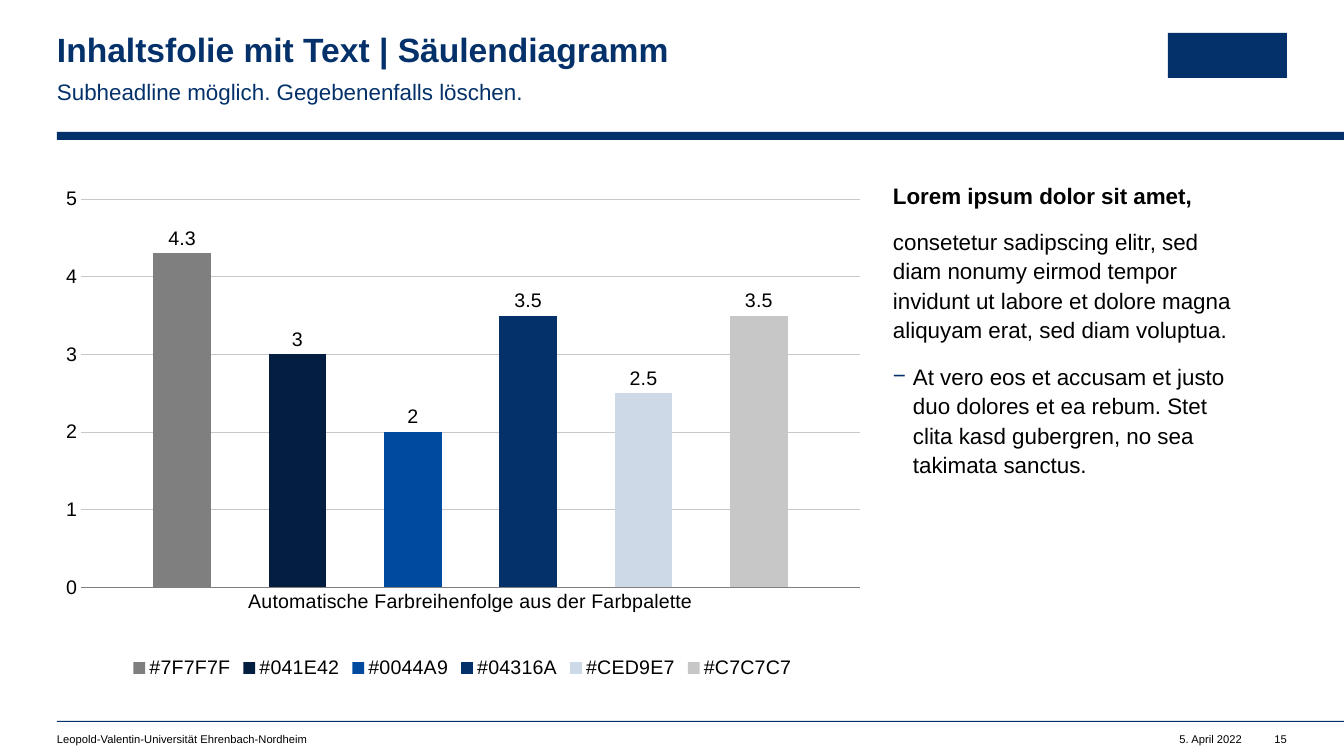
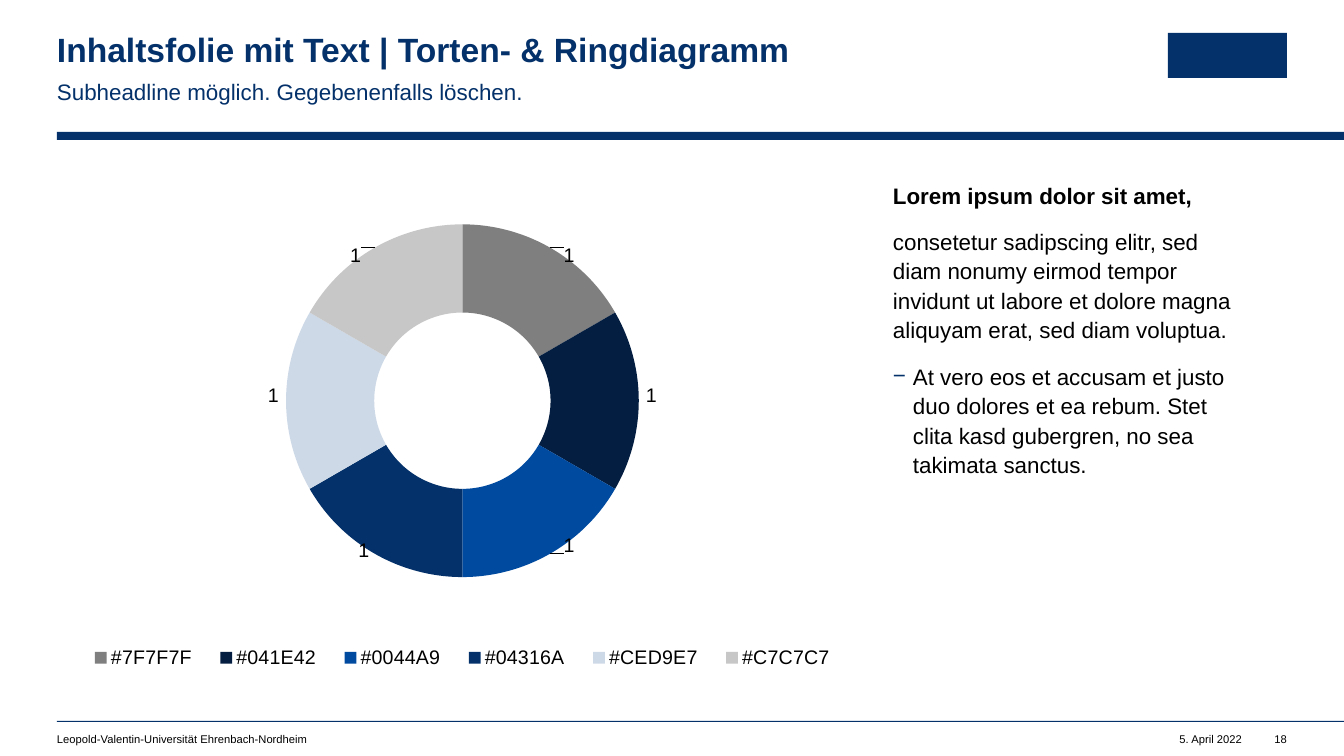
from lxml.etree import SubElement
from pptx import Presentation
from pptx.chart.data import CategoryChartData
from pptx.dml.color import RGBColor
from pptx.enum.chart import XL_CHART_TYPE as CHART
from pptx.enum.chart import XL_LABEL_POSITION as LABEL_POS
from pptx.enum.chart import XL_LEGEND_POSITION as LEGEND_POS
from pptx.enum.chart import XL_TICK_MARK as TICK
from pptx.enum.shapes import MSO_SHAPE as SHAPE
from pptx.enum.text import PP_ALIGN as ALIGN
from pptx.oxml.ns import qn
from pptx.util import Inches, Pt

WIDTH, HEIGHT = 1344, 756
SCALE = Inches(7.5) / HEIGHT
LEFT, RIGHT = 57, 1287
FONT = "Arial"
COLORS = {
    "navy": "04316A",
    "black": "000000",
    "axis": "7F7F7F",
    "grid": "C7C7C7",
}
SWATCHES = {
    "#7F7F7F": "7F7F7F",
    "#041E42": "041E42",
    "#0044A9": "004A9F",
    "#04316A": "04316A",
    "#CED9E7": "CED9E7",
    "#C7C7C7": "C7C7C7",
}
CHART_BOX = (LEFT, 179, 811, 504)
LABEL_SHIFTS = [(41, -31), (54, -7), (37, 28), (-29, 34), (-53, -7), (-40, -31)]


def px(n):
    return round(n * SCALE)


def rgb(name):
    return RGBColor.from_string(COLORS[name])


def add_bar(s, *box):
    sp = s.shapes.add_shape(SHAPE.RECTANGLE, *map(px, box))
    sp.shadow.inherit = False
    sp.fill.solid()
    sp.fill.fore_color.rgb = rgb("navy")
    sp.line.fill.background()


def add_box(s, *box, right=0):
    tf = s.shapes.add_textbox(*map(px, box)).text_frame
    tf.word_wrap = True
    tf.margin_left = tf.margin_top = tf.margin_bottom = 0
    tf.margin_right = px(right)
    return tf


def write(tf, text, size=16, color="black", bold=False, align=ALIGN.LEFT,
          line=1.1, after=12, bullet=None):
    p = tf.add_paragraph() if tf.text else tf.paragraphs[0]
    p.alignment = align
    p.line_spacing = line
    p.space_after = Pt(after)
    r = p.add_run()
    r.text = text
    r.font.name = FONT
    r.font.size = Pt(size)
    r.font.bold = bold
    r.font.color.rgb = rgb(color)
    if bullet:
        pPr = p._p.get_or_add_pPr()
        pPr.set("marL", str(px(20)))
        pPr.set("indent", str(-px(20)))
        clr = SubElement(pPr, qn("a:buClr"))
        SubElement(clr, qn("a:srgbClr"), val=COLORS["navy"])
        SubElement(pPr, qn("a:buFont"), typeface=FONT)
        SubElement(pPr, qn("a:buChar"), char=bullet)


def add_frame(s, title, number):
    add_bar(s, LEFT, 132, WIDTH - LEFT, 8)
    add_bar(s, LEFT, 721, WIDTH - LEFT, 1)
    add_bar(s, 1168, 33, 119, 45)
    write(add_box(s, LEFT, 33, 755, 36), title,
          size=24, color="navy", bold=True, line=0.9, after=0)
    write(add_box(s, LEFT, 76, 755, 27, right=39),
          "Subheadline möglich. Gegebenenfalls löschen.", color="navy")
    footers = [
        (LEFT, 603, "Leopold-Valentin-Universität Ehrenbach-Nordheim", ALIGN.LEFT),
        (1148, 94, "5. April 2022", ALIGN.RIGHT),
        (1257, 30, number, ALIGN.RIGHT),
    ]
    for left, width, text, align in footers:
        write(add_box(s, left, 732, width, 13), text,
              size=8, align=align, line=1.0, after=0)


def add_body(s):
    tf = add_box(s, 893, 179, RIGHT - 893, 504, right=39)
    write(tf, "Lorem ipsum dolor sit amet,", bold=True)
    write(tf, "consetetur sadipscing elitr, sed diam nonumy eirmod tempor "
              "invidunt ut labore et dolore magna aliquyam erat, sed diam voluptua.")
    write(tf, "At vero eos et accusam et justo duo dolores et ea rebum. "
              "Stet clita kasd gubergren, no sea takimata sanctus.", bullet="−")


def set_font(font):
    font.name = FONT
    font.size = Pt(14)
    font.color.rgb = rgb("black")


def set_layout(parent, index, **values):
    for old in parent.findall(qn("c:layout")):
        parent.remove(old)
    layout = SubElement(parent, qn("c:layout"))
    parent.insert(index, layout)
    manual = SubElement(layout, qn("c:manualLayout"))
    for name, value in values.items():
        SubElement(manual, qn(f"c:{name}"), val=str(value))


def set_line(line, color):
    line.color.rgb = rgb(color)
    line.width = Pt(0.5)


def paint(part, color):
    part.format.fill.solid()
    part.format.fill.fore_color.rgb = RGBColor.from_string(color)


def add_chart(s, kind, categories, series, plot):
    data = CategoryChartData()
    data.categories = categories
    for name, values in series:
        data.add_series(name, values)
    chart = s.shapes.add_chart(kind, *map(px, CHART_BOX), data).chart
    chart.has_title = False
    set_font(chart.font)
    chart.has_legend = True
    chart.legend.position = LEGEND_POS.BOTTOM
    chart.legend.include_in_layout = False
    set_font(chart.legend.font)
    x, y, w, h = plot
    set_layout(chart.element.find(".//" + qn("c:plotArea")), 0,
               layoutTarget="inner", xMode="edge", yMode="edge", x=x, y=y, w=w, h=h)
    for ser in chart.plots[0].series:
        ser.data_labels.show_value = True
        set_font(ser.data_labels.font)
    return chart


def add_columns(s):
    values = [4.3, 3, 2, 3.5, 2.5, 3.5]
    chart = add_chart(s, CHART.COLUMN_CLUSTERED,
                      ["Automatische Farbreihenfolge aus der Farbpalette"],
                      [(name, [v]) for name, v in zip(SWATCHES, values)],
                      (0.03, 0.04, 0.96, 0.77))
    plot = chart.plots[0]
    plot.vary_by_categories = False
    plot.gap_width = 250
    plot.overlap = -100
    for ser, color in zip(plot.series, SWATCHES.values()):
        paint(ser, color)
        ser.data_labels.position = LABEL_POS.OUTSIDE_END
    cat, val = chart.category_axis, chart.value_axis
    for axis in (cat, val):
        axis.major_tick_mark = axis.minor_tick_mark = TICK.NONE
        set_font(axis.tick_labels.font)
    set_line(cat.format.line, "axis")
    val.minimum_scale, val.maximum_scale, val.major_unit = 0, 5, 1
    val.format.line.fill.background()
    val.has_major_gridlines = True
    set_line(val.major_gridlines.format.line, "grid")


def add_ring(s):
    chart = add_chart(s, CHART.DOUGHNUT, list(SWATCHES),
                      [("Series 1", [1] * len(SWATCHES))],
                      (0.21, 0.09, 0.58, 0.7))
    plot = chart.plots[0]
    plot.vary_by_categories = True
    points = plot.series[0].points
    for i, color in enumerate(SWATCHES.values()):
        paint(points[i], color)
        set_font(points[i].data_label.font)
    for label, (dx, dy) in zip(chart.element.iter(qn("c:dLbl")), LABEL_SHIFTS):
        set_layout(label, 1, x=round(dx / CHART_BOX[2], 2), y=round(dy / CHART_BOX[3], 2))
    chart.element.find(".//" + qn("c:holeSize")).set("val", "80")
    set_layout(chart.legend._element, 1, xMode="edge", yMode="edge",
               x=0.02, y=0.92, w=0.96, h=0.06)


def main():
    prs = Presentation()
    prs.slide_width, prs.slide_height = px(WIDTH), px(HEIGHT)
    slides = [
        ("Säulendiagramm", "15", add_columns),
        ("Torten- & Ringdiagramm", "18", add_ring),
    ]
    for topic, number, draw_chart in slides:
        s = prs.slides.add_slide(prs.slide_layouts[6])
        add_frame(s, f"Inhaltsfolie mit Text | {topic}", number)
        add_body(s)
        draw_chart(s)
    prs.save("out.pptx")


if __name__ == "__main__":
    main()
